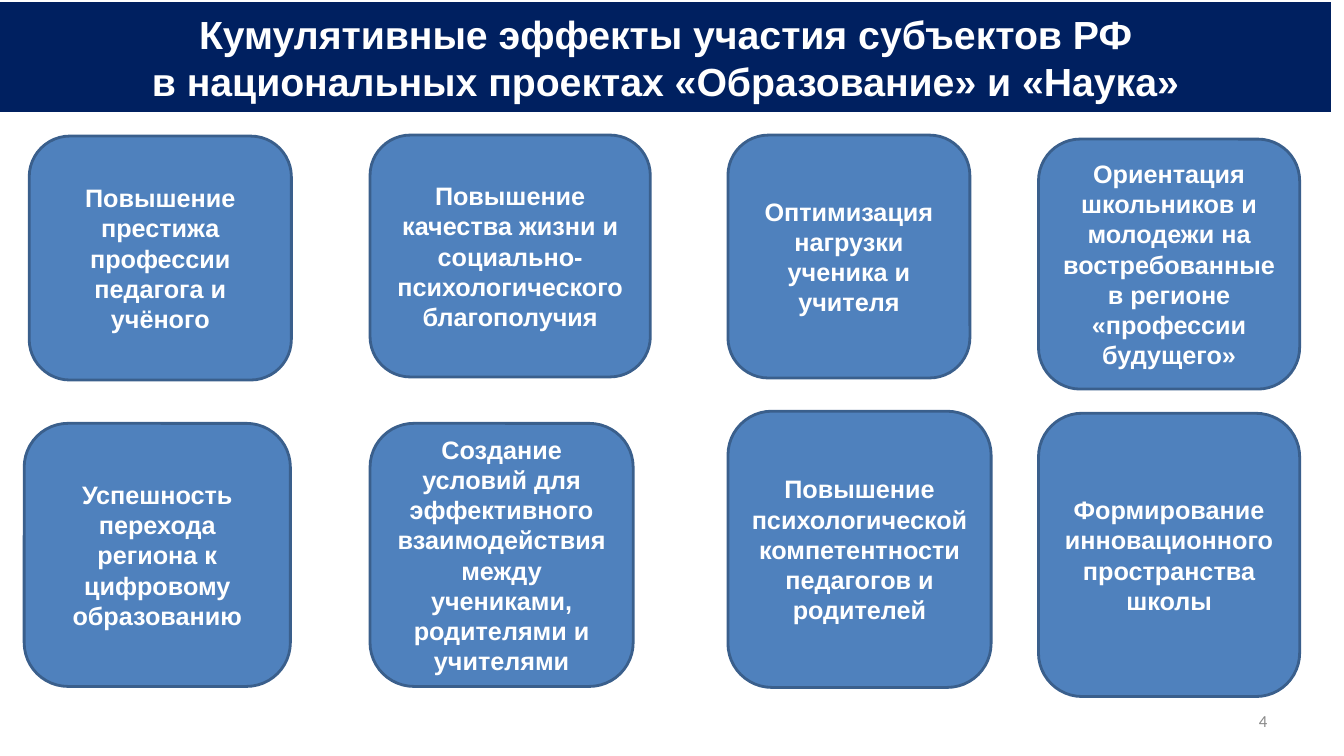
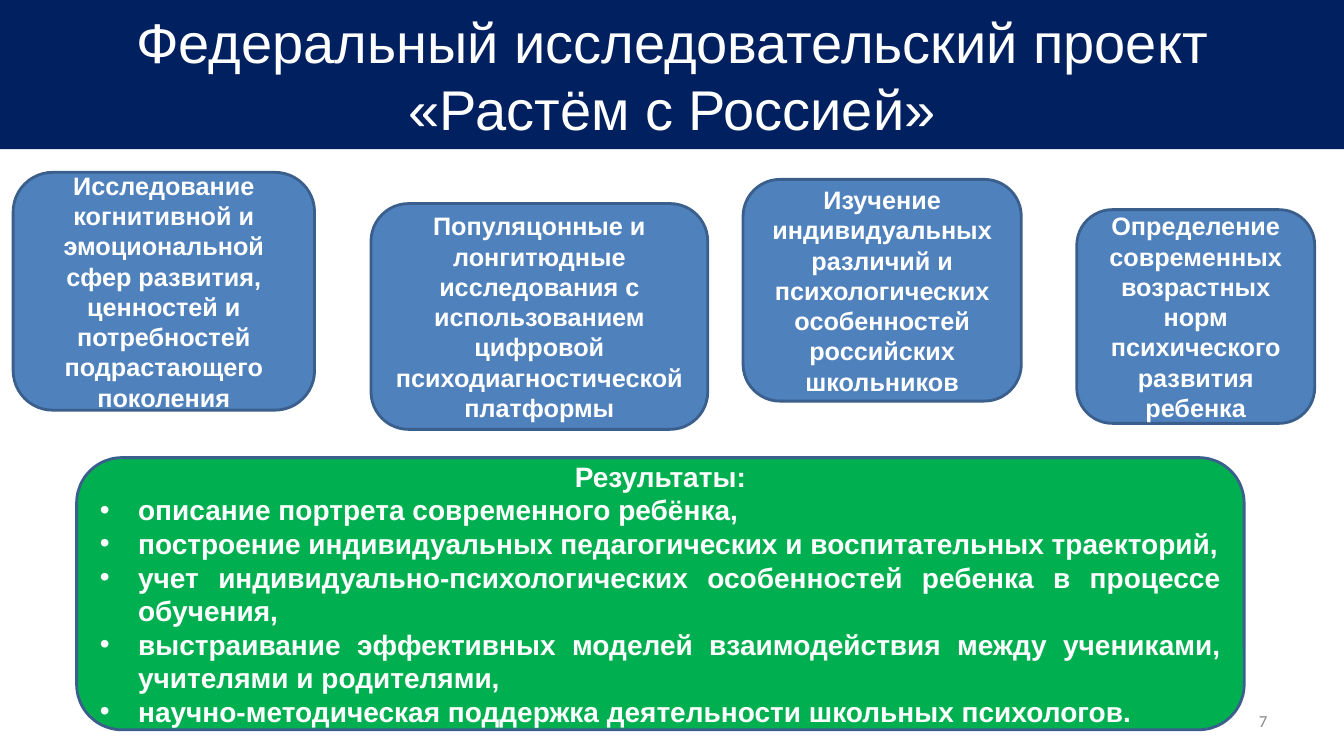
from dataclasses import dataclass

from lxml.etree import SubElement
from pptx import Presentation
from pptx.dml.color import RGBColor
from pptx.enum.shapes import MSO_SHAPE
from pptx.enum.text import MSO_ANCHOR, MSO_AUTO_SIZE, PP_ALIGN
from pptx.oxml.ns import qn
from pptx.util import Inches, Pt


@dataclass(frozen=True)
class Theme:
    band: RGBColor = RGBColor(0x00, 0x20, 0x60)
    card: RGBColor = RGBColor(0x4F, 0x81, 0xBD)
    results: RGBColor = RGBColor(0x00, 0xB0, 0x50)
    outline: RGBColor = RGBColor(0x3A, 0x5F, 0x8C)
    light: RGBColor = RGBColor(0xFF, 0xFF, 0xFF)
    muted: RGBColor = RGBColor(0x89, 0x89, 0x89)
    font: str = "Arial"
    number_font: str = "Calibri"
    card_size: int = 18
    results_size: int = 20
    number_size: int = 12
    outline_width: int = 2


THEME = Theme()
TITLE_ONLY = 5

# Cards: left, top, width, height, paragraphs
EFFECT_CARDS = [
    (0.29, 1.35, 2.6, 2.42, ["Повышение", "престижа профессии педагога и учёного"]),
    (3.67, 1.34, 2.78, 2.4,
     ["Повышение качества жизни и социально-психологического благополучия"]),
    (7.22, 1.34, 2.4, 2.41, ["Оптимизация нагрузки ученика и учителя"]),
    (10.3, 1.38, 2.59, 2.48,
     ["Ориентация школьников и молодежи на востребованные",
      "в регионе «профессии будущего»"]),
    (0.24, 4.2, 2.64, 2.61, ["Успешность перехода региона к цифровому образованию"]),
    (3.67, 4.2, 2.61, 2.61,
     ["Создание условий для эффективного взаимодействия между учениками, "
      "родителями и учителями"]),
    (7.22, 4.08, 2.61, 2.74,
     ["Повышение психологической компетентности педагогов и родителей"]),
    (10.3, 4.1, 2.59, 2.81, ["Формирование инновационного пространства школы"]),
]

RESEARCH_CARDS = [
    (0.13, 1.71, 2.99, 2.36,
     ["Исследование когнитивной и эмоциональной сфер развития, ценностей и "
      "потребностей подрастающего поколения"]),
    (3.68, 2.02, 3.34, 2.24,
     ["Популяцонные и лонгитюдные исследования с использованием цифровой "
      "психодиагностической платформы"]),
    (7.37, 1.78, 2.76, 2.2,
     ["Изучение индивидуальных различий и психологических особенностей",
      "российских школьников"]),
    (10.68, 2.08, 2.36, 2.12,
     ["Определение современных возрастных норм психического развития ребенка"]),
]

RESULTS = [
    "описание портрета современного ребёнка,",
    "построение индивидуальных педагогических и воспитательных траекторий,",
    "учет индивидуально-психологических особенностей ребенка в процессе обучения,",
    "выстраивание эффективных моделей взаимодействия между учениками, "
    "учителями и родителями,",
    "научно-методическая поддержка деятельности школьных психологов.",
]


def write_paragraphs(frame, texts, size, bold=False, color=THEME.light,
                     font=THEME.font, alignment=PP_ALIGN.CENTER):
    """Fill a text frame, one run per paragraph."""
    frame.word_wrap = True
    frame.auto_size = MSO_AUTO_SIZE.NONE
    frame.vertical_anchor = MSO_ANCHOR.MIDDLE
    for index, text in enumerate(texts):
        paragraph = frame.paragraphs[0] if index == 0 else frame.add_paragraph()
        paragraph.alignment = alignment
        run = paragraph.add_run()
        run.text = text
        run.font.name = font
        run.font.size = Pt(size)
        run.font.bold = bold
        run.font.color.rgb = color


def make_bullet(paragraph, indent=Inches(0.38)):
    paragraph.alignment = PP_ALIGN.JUSTIFY
    properties = paragraph._p.get_or_add_pPr()
    properties.set("marL", str(indent))
    properties.set("indent", str(-indent))
    SubElement(properties, qn("a:buFont")).set("typeface", THEME.font)
    SubElement(properties, qn("a:buChar")).set("char", "•")


def add_title_band(slide, top, width, height, lines, size, bold):
    title = slide.shapes.title
    title.left, title.top = Inches(0), Inches(top)
    title.width, title.height = Inches(width), Inches(height)
    title.fill.solid()
    title.fill.fore_color.rgb = THEME.band
    write_paragraphs(title.text_frame, lines, size, bold)


def add_card(slide, left, top, width, height, texts,
             fill=THEME.card, size=THEME.card_size):
    card = slide.shapes.add_shape(
        MSO_SHAPE.ROUNDED_RECTANGLE,
        Inches(left), Inches(top), Inches(width), Inches(height))
    card.shadow.inherit = False
    card.fill.solid()
    card.fill.fore_color.rgb = fill
    card.line.color.rgb = THEME.outline
    card.line.width = Pt(THEME.outline_width)
    write_paragraphs(card.text_frame, texts, size, bold=True)
    return card


def add_page_number(slide, number):
    box = slide.shapes.add_textbox(
        Inches(9.56), Inches(6.95), Inches(3.11), Inches(0.4))
    write_paragraphs(box.text_frame, [str(number)], THEME.number_size,
                     color=THEME.muted, font=THEME.number_font,
                     alignment=PP_ALIGN.RIGHT)


def add_card_slide(presentation, number, cards, **band):
    slide = presentation.slides.add_slide(presentation.slide_layouts[TITLE_ONLY])
    add_title_band(slide, **band)
    add_page_number(slide, number)
    for card in cards:
        add_card(slide, *card)
    return slide


def main():
    presentation = Presentation()
    presentation.slide_width = Inches(13.33)
    presentation.slide_height = Inches(7.5)

    # Cumulative effects
    add_card_slide(
        presentation, 4, EFFECT_CARDS, top=0.02, width=13.2, height=1.09,
        lines=["Кумулятивные эффекты участия субъектов РФ",
               "в национальных проектах «Образование» и «Наука»"],
        size=28, bold=True)

    # Research project and its results
    slide = add_card_slide(
        presentation, 7, RESEARCH_CARDS, top=0, width=13.33, height=1.48,
        lines=["Федеральный исследовательский проект", "«Растём с Россией»"],
        size=40, bold=False)
    panel = add_card(slide, 0.76, 4.54, 11.58, 2.7, ["Результаты:", *RESULTS],
                     THEME.results, THEME.results_size)
    for paragraph in panel.text_frame.paragraphs[1:]:
        make_bullet(paragraph)

    presentation.save("out.pptx")


if __name__ == "__main__":
    main()
